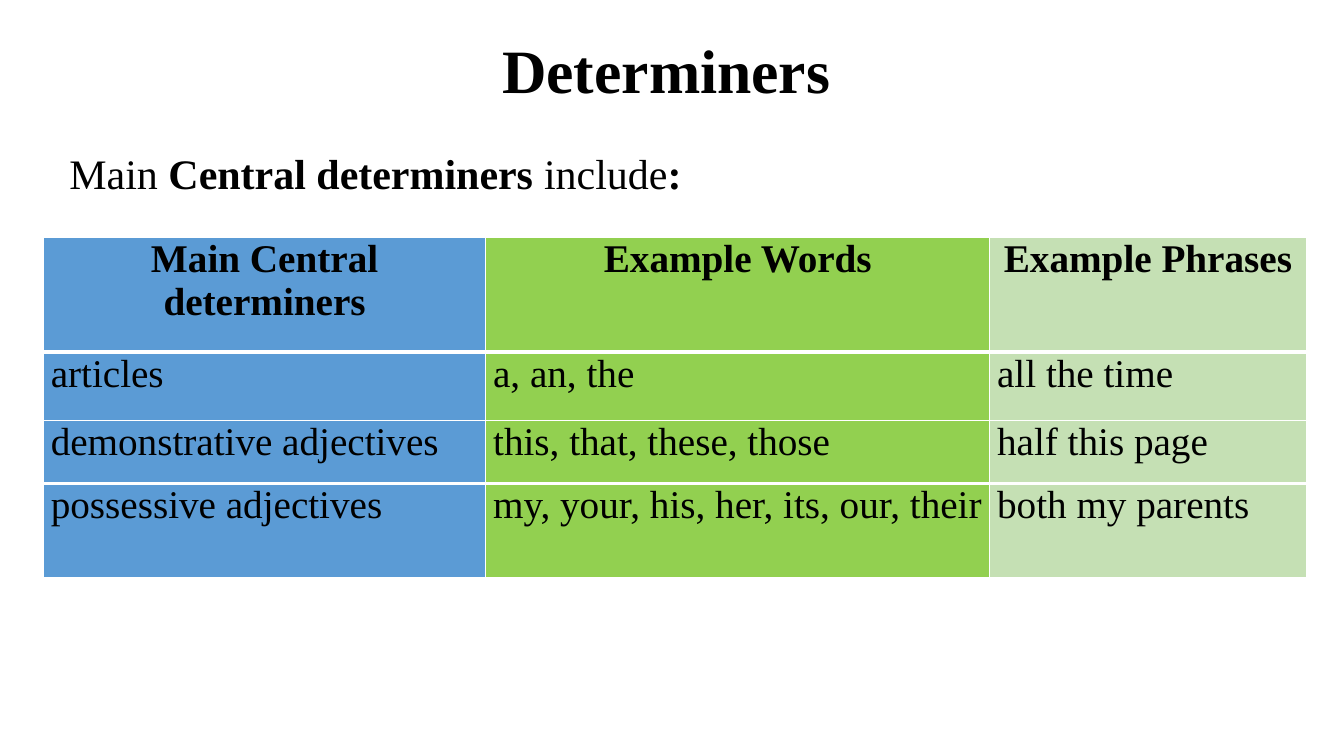
"""Build a slide on central determiners with a table of examples."""
from lxml.etree import SubElement
from pptx import Presentation
from pptx.dml.color import RGBColor
from pptx.enum.text import MSO_ANCHOR, PP_ALIGN
from pptx.oxml import parse_xml
from pptx.oxml.ns import nsdecls, qn
from pptx.util import Pt

TITLE = "Determiners "
LEAD = [("Main", False), (" Central determiners ", True),
        ("include", False), (": ", True)]
ROWS = [
    ("Main Central determiners", "Example Words", "Example Phrases"),
    ("articles", "a, an, the", "all the time"),
    ("demonstrative adjectives", "this, that, these, those", "half this page"),
    ("possessive adjectives", "my, your, his, her, its, our, their",
     "both my parents"),
]
WIDTHS = [316, 360, 226]
HEIGHTS = [82, 49, 45, 67]
EDGES = [1, 3, 1, 3, 1]
THEME = {
    "font": "Times New Roman", "ink": "000000", "rule": "FFFFFF",
    "fills": ["5B9BD5", "92D050", "C5E0B4"],
    "title": 44, "lead": 30, "cell": 28,
}


def write(frame, text, size, bold=False, align=PP_ALIGN.LEFT, gap=None, line=None):
    """Fill a frame with one paragraph of plain text or (text, bold) runs."""
    frame.word_wrap = True
    para = frame.paragraphs[0]
    para.alignment = align
    para.line_spacing = line
    if gap is not None:
        para.space_before = para.space_after = Pt(gap)
    for part, heavy in [(text, bold)] if isinstance(text, str) else text:
        run = para.add_run()
        run.text = part
        font = run.font
        font.name, font.size, font.bold = THEME["font"], Pt(size), heavy
        font.color.rgb = RGBColor.from_string(THEME["ink"])


def add_box(slide, left, top, width, height):
    """Add an empty text box and return its frame."""
    return slide.shapes.add_textbox(
        Pt(left), Pt(top), Pt(width), Pt(height)).text_frame


def edge(cell, sides):
    """Draw the cell borders, given as (side, weight) pairs."""
    props = cell._tc.get_or_add_tcPr()
    for spot, (side, weight) in enumerate(sides):
        line = parse_xml(f'<a:ln{side} {nsdecls("a")} w="{Pt(weight)}"/>')
        fill = SubElement(line, qn("a:solidFill"))
        SubElement(fill, qn("a:srgbClr"), val=THEME["rule"])
        props.insert(spot, line)


def add_grid(slide, left, top):
    """Add the table of determiners."""
    grid = slide.shapes.add_table(
        len(ROWS), len(WIDTHS), Pt(left), Pt(top),
        Pt(sum(WIDTHS)), Pt(sum(HEIGHTS))).table
    for col, width in zip(grid.columns, WIDTHS):
        col.width = Pt(width)
    for r, (row, words) in enumerate(zip(grid.rows, ROWS)):
        row.height = Pt(HEIGHTS[r])
        head = r == 0
        for cell, word, color in zip(row.cells, words, THEME["fills"]):
            cell.margin_left = cell.margin_right = Pt(5.3)
            cell.margin_top = cell.margin_bottom = Pt(0)
            cell.fill.solid()
            cell.fill.fore_color.rgb = RGBColor.from_string(color)
            edge(cell, [("L", 1), ("R", 1), ("T", EDGES[r]), ("B", EDGES[r + 1])])
            write(cell.text_frame, word, THEME["cell"], bold=head, gap=12,
                  align=PP_ALIGN.CENTER if head else PP_ALIGN.LEFT)


deck = Presentation()
deck.slide_width, deck.slide_height = Pt(960), Pt(540)
page = deck.slides.add_slide(deck.slide_layouts[6])
name = add_box(page, 67.5, 24, 828, 57)
name.vertical_anchor = MSO_ANCHOR.MIDDLE
write(name, TITLE, THEME["title"], bold=True, align=PP_ALIGN.CENTER, line=0.9)
write(add_box(page, 42.5, 102, 869, 44), LEAD, THEME["lead"])
add_grid(page, 31, 169.5)
deck.save("out.pptx")
